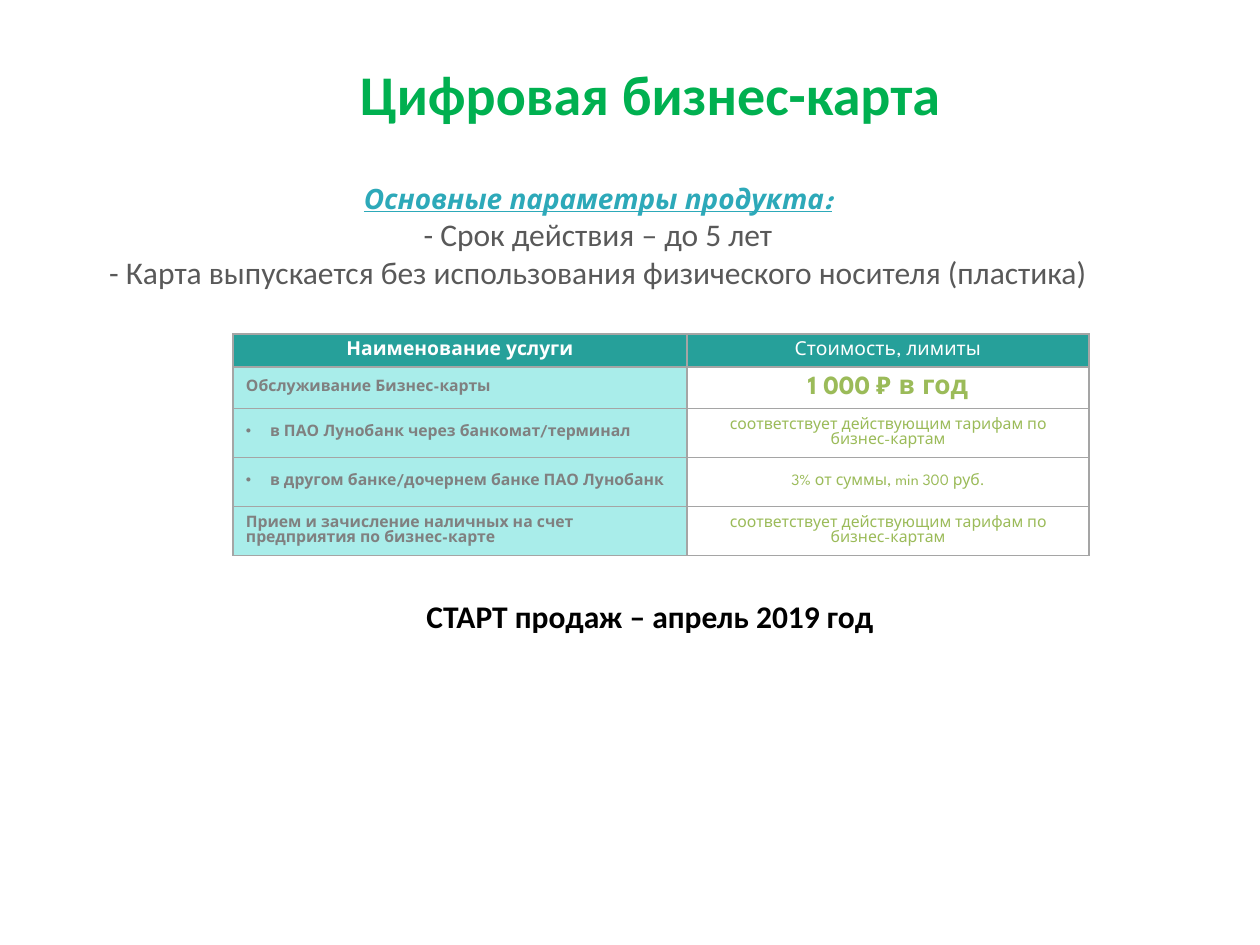
import pptx
import pptx.dml.color
import pptx.enum.text
import pptx.oxml
import pptx.oxml.ns
import pptx.util
from lxml import etree

RGB = pptx.dml.color.RGBColor
GREEN = RGB(0x00, 0xB0, 0x50)
BLUE = RGB(0x2D, 0xA9, 0xB9)
DARK = RGB(0x59, 0x59, 0x59)
BLACK = RGB(0x00, 0x00, 0x00)
WHITE = RGB(0xFF, 0xFF, 0xFF)
TEAL = RGB(0x26, 0xA0, 0x9A)
MINT = RGB(0xA9, 0xED, 0xEA)
GRAY = RGB(0x80, 0x80, 0x80)
LIME = RGB(0x9B, 0xBB, 0x59)
LINE = RGB(0xA5, 0xA5, 0xA5)
SANS = "Calibri"
HEAD = "League Spartan"
MID = pptx.enum.text.PP_ALIGN.CENTER
LEFT = pptx.enum.text.PP_ALIGN.LEFT
ANCHOR = pptx.enum.text.MSO_ANCHOR
SCALE = 914400 / 126


def px(n):
    return pptx.util.Emu(round(n * SCALE))


def write(para, text, size, face, color, bold=False, align=MID):
    para.alignment = align
    run = para.add_run()
    run.text = text
    run.font.size = pptx.util.Pt(size)
    run.font.name = face
    run.font.bold = bold
    run.font.color.rgb = color
    return run


deck = pptx.Presentation()
deck.slide_width = px(1260)
deck.slide_height = px(945)
slide = deck.slides.add_slide(deck.slide_layouts[6])

title = slide.shapes.add_textbox(px(115), px(26), px(1071), px(203)).text_frame
title.word_wrap = True
title.vertical_anchor = ANCHOR.MIDDLE
title.margin_bottom = px(74)
write(title.paragraphs[0], "Цифровая бизнес-карта", 32, SANS, GREEN, True)

terms = slide.shapes.add_textbox(px(40), px(156), px(1116), px(144)).text_frame
terms.word_wrap = True
terms.margin_left = terms.margin_right = px(16)
terms.margin_top = terms.margin_bottom = px(9)
first = terms.paragraphs[0]
first.line_spacing = 1.5
lead = write(first, "Основные параметры продукта:", 16, HEAD, BLUE, True)
lead.font.italic = True
lead.font.underline = True
for text in (
    "- Срок действия – до 5 лет",
    "- Карта выпускается без использования физического носителя (пластика)",
):
    write(terms.add_paragraph(), text, 18, SANS, DARK)

TARIFF = "соответствует действующим тарифам по бизнес-картам"
ROWS = [
    ("Наименование услуги", "Стоимость, лимиты", 32),
    ("Обслуживание Бизнес-карты", "1 000 ₽ в год", 41),
    ("в ПАО Лунобанк через банкомат/терминал", TARIFF, 49),
    ("в другом банке/дочернем банке ПАО Лунобанк", "3% от суммы, min 300 руб.", 49),
    ("Прием и зачисление наличных на счет предприятия по бизнес-карте", TARIFF, 49),
]
frame = slide.shapes.add_table(len(ROWS), 2, px(233), px(334), px(856), px(220))
table = frame.table
table.horz_banding = False
table.columns[0].width = px(454)
table.columns[1].width = px(402)
for r, (name, cost, high) in enumerate(ROWS):
    table.rows[r].height = px(high)
    for c, text in enumerate((name, cost)):
        cell = table.cell(r, c)
        cell.vertical_anchor = ANCHOR.MIDDLE
        cell.margin_left = cell.margin_right = px(13)
        cell.margin_top = cell.margin_bottom = px(5)
        para = cell.text_frame.paragraphs[0]
        if r == 0:
            fill, size, color = TEAL, 11, WHITE
        elif c == 0:
            fill, size, color = MINT, 9, GRAY
        else:
            fill, size, color = WHITE, 15 if r == 1 else 9, LIME
        bold = c == 0 or r == 1
        write(para, text, size, HEAD, color, bold, LEFT if r and c == 0 else MID)
        cell.fill.solid()
        cell.fill.fore_color.rgb = fill
        if c == 0 and r in (2, 3):
            props = para._p.get_or_add_pPr()
            props.set("marL", str(px(24)))
            props.set("indent", str(-px(24)))
            mark = etree.SubElement(props, pptx.oxml.ns.qn("a:buChar"))
            mark.set("char", "•")
        edges = cell._tc.get_or_add_tcPr()
        for i, side in enumerate("LRTB"):
            edge = pptx.oxml.parse_xml(
                f'<a:ln{side} {pptx.oxml.ns.nsdecls("a")} w="12700"><a:solidFill>'
                f'<a:srgbClr val="{LINE}"/></a:solidFill></a:ln{side}>'
            )
            edges.insert(i, edge)

start = slide.shapes.add_textbox(px(335), px(591), px(630), px(50)).text_frame
start.word_wrap = True
write(start.paragraphs[0], "СТАРТ продаж – апрель 2019 год", 18, SANS, BLACK, True)

deck.save("out.pptx")
